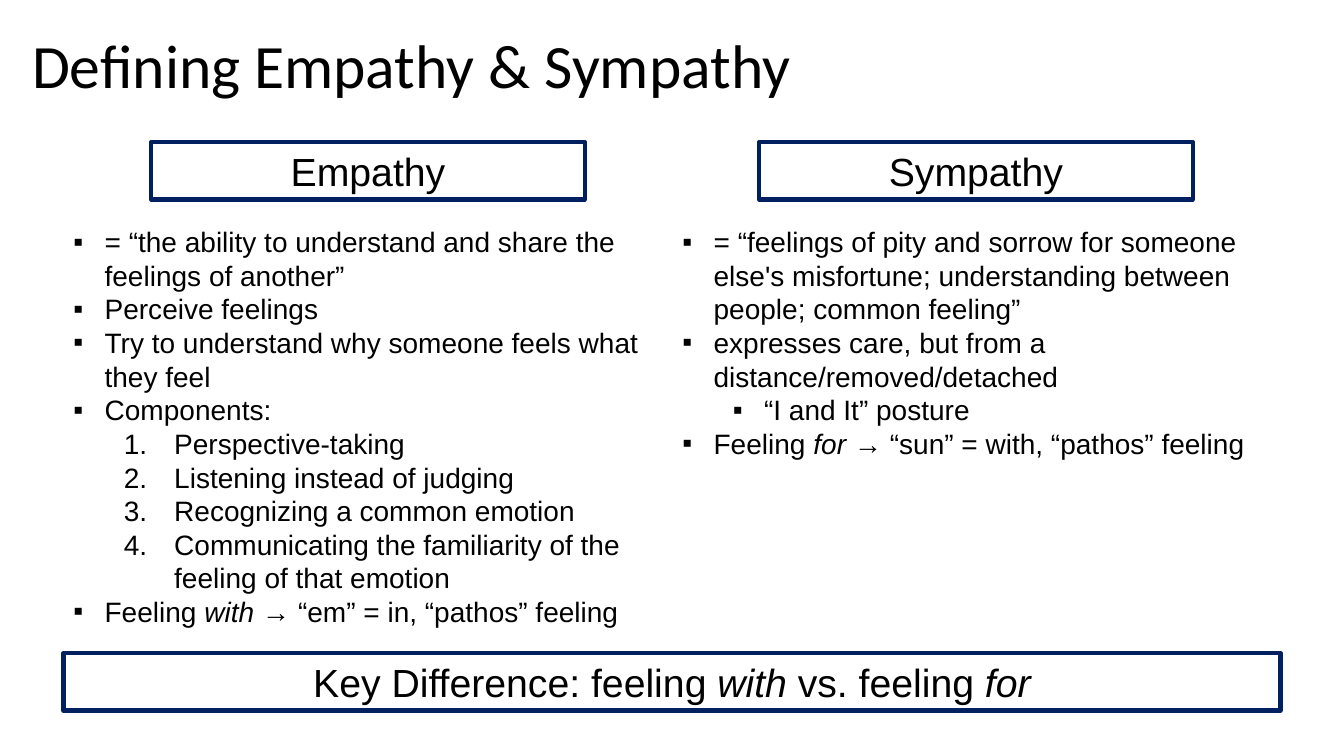
from lxml.etree import SubElement
from pptx import Presentation
from pptx.dml.color import RGBColor
from pptx.enum.shapes import MSO_SHAPE as Shape
from pptx.enum.text import MSO_ANCHOR as Anchor, PP_ALIGN as Align
from pptx.oxml.ns import qn
from pptx.util import Pt

PX = 9144
COLORS = {"text": "000000", "border": "002060", "paper": "FFFFFF"}
INDENTS = {"bullet": (0, 31, 31), "sub": (1, 81, 31), "number": (1, 100, 50)}


def add_box(left, top, width, height, border=None, fill=None):
    box = slide.shapes.add_shape(
        Shape.RECTANGLE, *(length * PX for length in (left, top, width, height)))
    box.shadow.inherit = False
    if fill:
        box.fill.solid()
        box.fill.fore_color.rgb = RGBColor.from_string(COLORS[fill])
    else:
        box.fill.background()
    if border:
        box.line.color.rgb = RGBColor.from_string(COLORS[border])
        box.line.width = Pt(3)
    else:
        box.line.fill.background()
    box.text_frame.word_wrap = True
    box.text_frame.vertical_anchor = Anchor.TOP
    return box.text_frame


def write(para, text, size, font="Arial", align=Align.LEFT):
    para.alignment = align
    for index, part in enumerate(text.split("*")):
        if part:
            span = para.add_run()
            span.text = part
            span.font.name = font
            span.font.size = Pt(size)
            span.font.italic = index % 2 == 1
            span.font.color.rgb = RGBColor.from_string(COLORS["text"])


deck = Presentation()
deck.slide_width, deck.slide_height = 1333 * PX, 750 * PX
slide = deck.slides.add_slide(deck.slide_layouts[6])

headings = [
    (150, 141, 430, "Empathy"),
    (753, 141, 430, "Sympathy"),
    (63, 648, 1207, "Key Difference: feeling *with *vs. feeling *for*"),
]
for left, top, width, text in headings:
    frame = add_box(left, top, width, 57, border="border")
    write(frame.paragraphs[0], text, 28, align=Align.CENTER)

columns = [
    (63, 411, [
        ("bullet", "= “the ability to understand and share the feelings of another”"),
        ("bullet", "Perceive feelings"),
        ("bullet", "Try to understand why someone feels what they feel"),
        ("bullet", "Components:"),
        ("number", "Perspective-taking"),
        ("number", "Listening instead of judging"),
        ("number", "Recognizing a common emotion"),
        ("number", "Communicating the familiarity of the feeling of that emotion"),
        ("bullet", "Feeling *with *→ “em” = in, “pathos” feeling"),
    ]),
    (667, 246, [
        ("bullet", "= “feelings of pity and sorrow for someone else's misfortune; "
                   "understanding between people; common feeling”"),
        ("bullet", "expresses care, but from a distance/removed/detached"),
        ("sub", "“I and It” posture"),
        ("bullet", "Feeling *for *→ “sun” = with, “pathos” feeling"),
    ]),
]
for left, height, points in columns:
    frame = add_box(left, 218, 604, height)
    for index, (kind, text) in enumerate(points):
        para = frame.add_paragraph() if index else frame.paragraphs[0]
        level, margin, hanging = INDENTS[kind]
        para.level = level
        write(para, text, 20)
        props = para._p.get_or_add_pPr()
        props.set("marL", str(margin * PX))
        props.set("indent", str(-hanging * PX))
        SubElement(props, qn("a:buFont"), typeface="Arial")
        if kind == "number":
            SubElement(props, qn("a:buAutoNum"), type="arabicPeriod")
        else:
            SubElement(props, qn("a:buChar"), char="▪")

title = add_box(22, 18, 1150, 99, fill="paper")
title.vertical_anchor = Anchor.MIDDLE
title.paragraphs[0].line_spacing = 0.9
write(title.paragraphs[0], "Defining Empathy & Sympathy", 44, font="Calibri")

deck.save("out.pptx")
